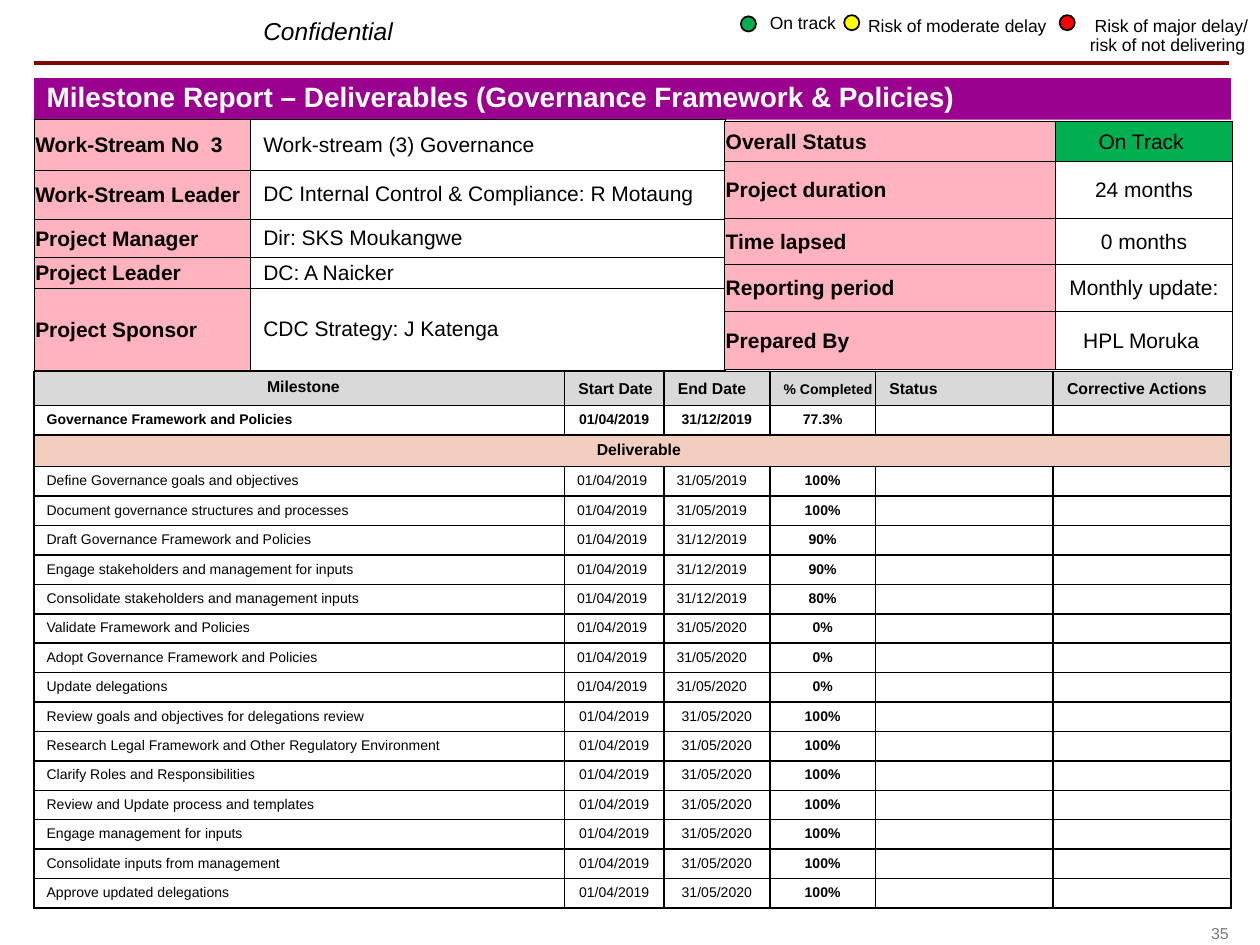
from lxml import etree
from pptx import Presentation
from pptx.dml.color import RGBColor
from pptx.enum.shapes import MSO_CONNECTOR, MSO_SHAPE
from pptx.enum.text import MSO_ANCHOR, PP_ALIGN
from pptx.oxml.ns import qn
from pptx.util import Inches, Pt

LEFT, MID, RIGHT = PP_ALIGN.LEFT, PP_ALIGN.CENTER, PP_ALIGN.RIGHT
TOP, CENTER = MSO_ANCHOR.TOP, MSO_ANCHOR.MIDDLE
OVAL, STRAIGHT = MSO_SHAPE.OVAL, MSO_CONNECTOR.STRAIGHT

BLACK = RGBColor(0x00, 0x00, 0x00)
WHITE = RGBColor(0xFF, 0xFF, 0xFF)
GREEN = RGBColor(0x00, 0xB0, 0x50)
YELLOW = RGBColor(0xFF, 0xFF, 0x00)
RED = RGBColor(0xFF, 0x00, 0x00)
MAROON = RGBColor(0x7D, 0x09, 0x00)
PURPLE = RGBColor(0x99, 0x01, 0x8E)
PINK = RGBColor(0xFF, 0xB3, 0xBE)
PEACH = RGBColor(0xF2, 0xCE, 0xC0)
SILVER = RGBColor(0xD9, 0xD9, 0xD9)
GRAY = RGBColor(0x77, 0x78, 0x7B)

TIGHT = (0.01, 0.01, 0.01, 0)
INDENT = (0.1, 0, 0, 0)
PAD = (0.1, 0.05, 0.1, 0.05)
CENTRED = (0.2, 0.05, 0.1, 0.05)
HEAD = (0.11, 0.01, 0.01, 0)
BOX = (0.08, 0.08, 0.08, 0.08)

TEAM = [
    ("Work-Stream No  3", "Work-stream (3) Governance"),
    ("Work-Stream Leader", "DC Internal Control & Compliance: R Motaung"),
    ("Project Manager", "Dir: SKS Moukangwe"),
    ("Project Leader", "DC: A Naicker"),
    ("Project Sponsor", "CDC Strategy: J Katenga"),
]
STATE = [
    ("Overall Status", "On Track "),
    ("Project duration", "24 months"),
    ("Time lapsed", "0 months"),
    ("Reporting period", "Monthly update:"),
    ("Prepared By", "HPL Moruka "),
]
HEADS = ["Start Date", "End Date", "% Completed", "Status", "Corrective Actions"]
START = "01/04/2019"
FRAME = [
    ("Define Governance goals and objectives", "31/05/2019", "100%"),
    ("Document governance structures and processes", "31/05/2019", "100%"),
    ("Draft Governance Framework and Policies", "31/12/2019", "90%"),
    ("Engage stakeholders and management for inputs", "31/12/2019", "90%"),
    ("Consolidate stakeholders and management inputs", "31/12/2019", "80%"),
    ("Validate Framework and Policies", "31/05/2020", "0%"),
    ("Adopt Governance Framework and Policies", "31/05/2020", "0%"),
    ("Update delegations", "31/05/2020", "0%"),
]
REVIEW = [
    "Review goals and objectives for delegations review",
    "Research Legal Framework and Other Regulatory Environment",
    "Clarify Roles and Responsibilities",
    "Review and Update process and templates",
    "Engage management for inputs",
    "Consolidate inputs from management",
    "Approve updated delegations",
]


def write(frame, text, size=12, color=BLACK, bold=False, italic=False,
          align=LEFT, space=1.0):
    """Put one formatted paragraph into a text frame."""
    para = frame.paragraphs[0]
    para.alignment, para.line_spacing = align, space
    run = para.add_run()
    run.text = text
    font = run.font
    font.name, font.size, font.color.rgb = "Arial", Pt(size), color
    font.bold, font.italic = bold, italic


def label(slide, box, text, inset=BOX, anchor=TOP, **fmt):
    """Add a wrapped text box."""
    frame = slide.shapes.add_textbox(*map(Inches, box)).text_frame
    frame.word_wrap, frame.vertical_anchor = True, anchor
    (frame.margin_left, frame.margin_top,
     frame.margin_right, frame.margin_bottom) = map(Inches, inset)
    write(frame, text, **fmt)


def edge(cell, width):
    """Draw black borders on all sides of a cell."""
    props = cell._tc.get_or_add_tcPr()
    for side in ("a:lnL", "a:lnR", "a:lnT", "a:lnB"):
        line = etree.SubElement(props, qn(side), w=str(Pt(width)))
        fill = etree.SubElement(line, qn("a:solidFill"))
        etree.SubElement(fill, qn("a:srgbClr"), val=str(BLACK))


def grid(slide, box, cols, rows, width):
    """Add a plain bordered table with the given columns and rows."""
    table = slide.shapes.add_table(
        len(rows), len(cols), *map(Inches, box)).table
    table.first_row = table.horz_banding = False
    for col, size in zip(table.columns, cols):
        col.width = Inches(size)
    for row, size in zip(table.rows, rows):
        row.height = Inches(size)
    for cell in table.iter_cells():
        edge(cell, width)
    return table


def put(cell, text, fill=WHITE, inset=PAD, anchor=TOP, size=8, **fmt):
    """Fill a table cell with colour and text."""
    cell.fill.solid()
    cell.fill.fore_color.rgb = fill
    cell.vertical_anchor = anchor
    (cell.margin_left, cell.margin_top,
     cell.margin_right, cell.margin_bottom) = map(Inches, inset)
    if text:
        write(cell.text_frame, text, size=size, **fmt)
    else:
        mark = cell.text_frame.paragraphs[0]._p.get_or_add_endParaRPr()
        mark.set("sz", str(size * 100))


def banner(slide, box):
    """Place the title bar."""
    title = slide.shapes.title
    title.left, title.top, title.width, title.height = map(Inches, box)
    title.fill.solid()
    title.fill.fore_color.rgb = PURPLE
    title.text_frame.vertical_anchor = CENTER
    write(title.text_frame,
          "Milestone Report – Deliverables (Governance Framework & Policies)",
          size=16, color=WHITE, bold=True, space=0.9)


def margin(slide, box):
    """Place the header rule, the marking and the page number."""
    left, top, wide, high = box
    right = left + wide
    rule = slide.shapes.add_connector(
        STRAIGHT, *map(Inches, (left, top + 0.5, right, top + 0.5)))
    rule.line.color.rgb, rule.line.width = MAROON, Pt(2.25)
    etree.SubElement(rule._element.spPr, qn("a:effectLst"))
    label(slide, (left + 1.74, top + 0.05, 1.84, 0.39), "Confidential",
          size=14, italic=True)
    label(slide, (right - 0.29, top + high - 0.15, 0.29, 0.15), "35",
          inset=(0, 0, 0, 0), anchor=CENTER, size=9, color=GRAY, align=RIGHT)


def legend(slide, box):
    """Place the status dots and their labels."""
    left, top = box[:2]
    items = [
        (0, 0.09, GREEN, 0.15, 0, 0.79, 0.31, "On track"),
        (0.82, 0.08, YELLOW, 0.93, 0.02, 1.65, 0.31, "Risk of moderate delay"),
        (2.53, 0.08, RED, 2.69, 0.02, 1.45, 0.46,
         " Risk of major delay/ risk of not delivering"),
    ]
    for x, y, color, shift, drop, wide, high, text in items:
        dot = slide.shapes.add_shape(
            OVAL, *map(Inches, (left + x, top + y, 0.12, 0.12)))
        dot.shadow.inherit = False
        dot.fill.solid()
        dot.fill.fore_color.rgb = color
        dot.line.color.rgb, dot.line.width = BLACK, Pt(1)
        label(slide, (left + shift, top + drop, wide, high), text,
              size=10, space=0.9)


def facts(slide, box, cols, rows, pairs, inset, align):
    """Place a table of names and values and return it."""
    table = grid(slide, box, cols, rows, 0.5)
    for i, (name, value) in enumerate(pairs):
        put(table.cell(i, 0), name, PINK, TIGHT, CENTER, 12, bold=True)
        put(table.cell(i, 1), value, WHITE, inset, CENTER, 12, align=align)
    return table


def plan(slide, box):
    """Place the table of milestones and deliverables."""
    tasks = [(*task, LEFT) for task in FRAME]
    tasks += [(name, "31/05/2020", "100%", MID) for name in REVIEW]
    heads = [0.27, 0.23, 0.25]
    step = (box[3] - sum(heads)) / len(tasks)
    table = grid(slide, box, [4.21, 0.79, 0.84, 0.84, 1.41, 1.41],
                 heads + [step] * len(tasks), 1)
    put(table.cell(0, 0), "Milestone ", SILVER, CENTRED, size=9, bold=True,
        align=MID)
    for j, text in enumerate(HEADS, 1):
        put(table.cell(0, j), text, SILVER, HEAD, CENTER,
            8 if j == 3 else 9, bold=True)
    total = ["Governance Framework and Policies", START, "31/12/2019", "77.3%",
             "", ""]
    for j, text in enumerate(total):
        put(table.cell(1, j), text, bold=True, align=MID if j else LEFT)
    table.cell(2, 0).merge(table.cell(2, 5))
    put(table.cell(2, 0), "Deliverable", PEACH, CENTRED, size=9, bold=True,
        align=MID)
    for i, (name, end, done, align) in enumerate(tasks, 3):
        for j, text in enumerate((name, START, end, done, "", "")):
            put(table.cell(i, j), text, bold=j == 3,
                align=(LEFT, align, align, MID, LEFT, LEFT)[j])


def main():
    """Build and save the slide."""
    deck = Presentation()
    deck.slide_width, deck.slide_height = Inches(10), Inches(7.5)
    slide = deck.slides.add_slide(deck.slide_layouts[5])
    margin(slide, (0.27, 0, 9.48, 7.48))
    legend(slide, (5.88, 0.04, 4.14, 0.48))
    banner(slide, (0.27, 0.62, 9.5, 0.33))
    facts(slide, (0.27, 0.95, 5.49, 1.99), [1.72, 3.77],
          [0.4, 0.39, 0.3, 0.25, 0.65], TEAM, INDENT, LEFT)
    state = facts(slide, (5.75, 0.96, 4.03, 1.97), [2.63, 1.4],
                  [0.32, 0.45, 0.37, 0.37, 0.46], STATE, TIGHT, MID)
    state.cell(0, 1).fill.fore_color.rgb = GREEN
    plan(slide, (0.27, 2.95, 9.5, 4.25))
    deck.save("out.pptx")


if __name__ == "__main__":
    main()
